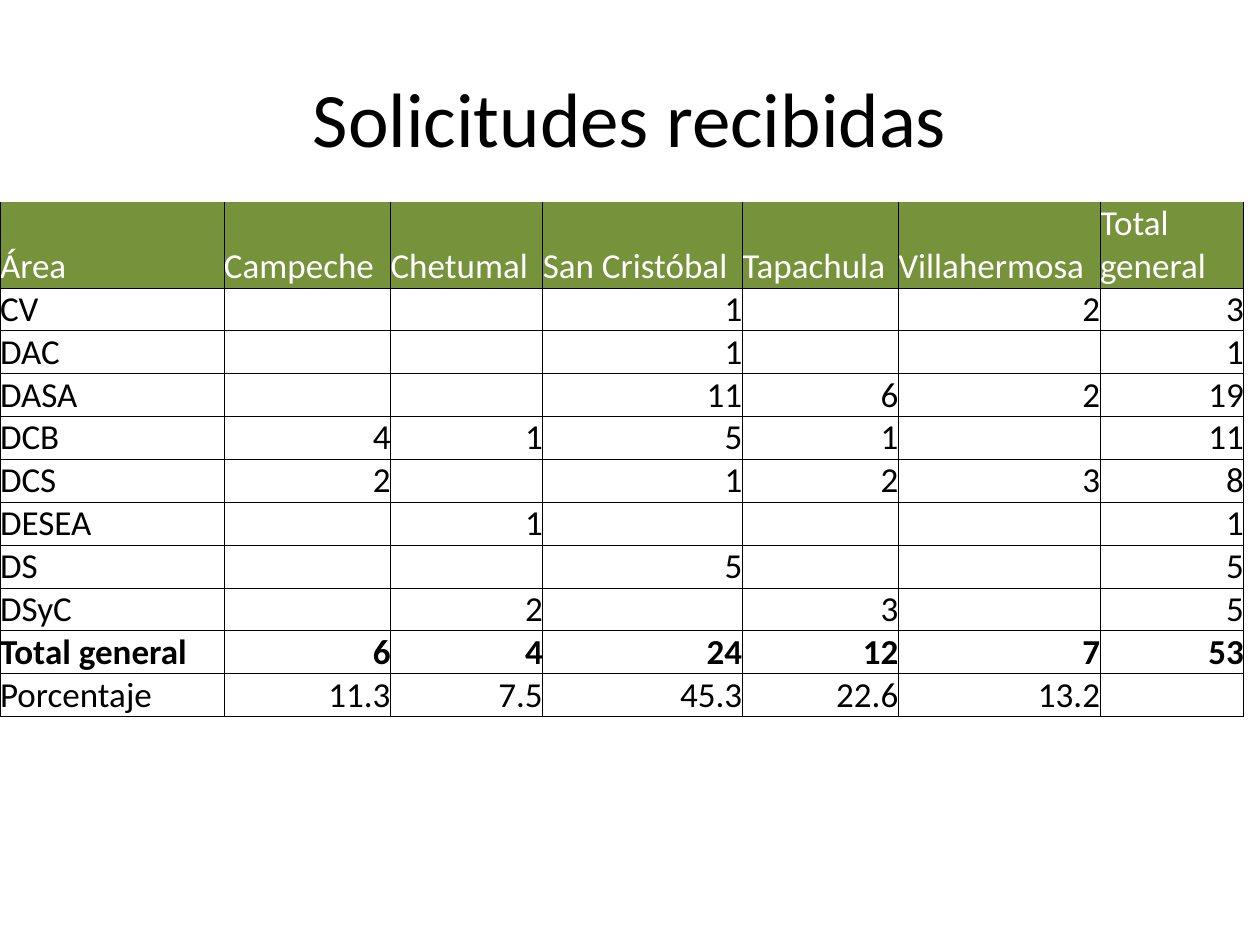
from dataclasses import dataclass

from lxml import etree
from pptx import Presentation
from pptx import util as u
from pptx.dml.color import RGBColor
from pptx.enum import text
from pptx.oxml import ns

COLORS = {"text": "000000", "line": "000000", "header": "76933C", "header_text": "FFFFFF"}
FONT = "Calibri"
COLUMN_WIDTHS = [128, 95.2, 87, 114, 89.2, 115.3, 82.2]
HEADER_HEIGHT = 49
ROW_HEIGHT = 24.5


@dataclass
class Row:
    values: list[str]
    header: bool = False
    bold: bool = False


ROWS = [
    Row(["Área", "Campeche", "Chetumal", "San Cristóbal", "Tapachula",
         "Villahermosa", "Total general"], header=True),
    Row(["CV", "", "", "1", "", "2", "3"]),
    Row(["DAC", "", "", "1", "", "", "1"]),
    Row(["DASA", "", "", "11", "6", "2", "19"]),
    Row(["DCB", "4", "1", "5", "1", "", "11"]),
    Row(["DCS", "2", "", "1", "2", "3", "8"]),
    Row(["DESEA", "", "1", "", "", "", "1"]),
    Row(["DS", "", "", "5", "", "", "5"]),
    Row(["DSyC", "", "2", "", "3", "", "5"]),
    Row(["Total general", "6", "4", "24", "12", "7", "53"], bold=True),
    Row(["Porcentaje", "11.3", "7.5", "45.3", "22.6", "13.2", ""]),
]


def add_run(paragraph, words: str, size: float, color: str, bold: bool = False) -> None:
    run = paragraph.add_run()
    run.text = words
    run.font.name = FONT
    run.font.size = u.Pt(size)
    run.font.bold = bold
    run.font.color.rgb = RGBColor.from_string(COLORS[color])


def add_borders(cell, top: str) -> None:
    properties = cell._tc.get_or_add_tcPr()
    for side in "LRTB":
        line = etree.SubElement(properties, ns.qn(f"a:ln{side}"), w=str(u.Pt(0.5)))
        fill = etree.SubElement(line, ns.qn("a:solidFill"))
        color = COLORS[top if side == "T" else "line"]
        etree.SubElement(fill, ns.qn("a:srgbClr"), val=color)


def fill_cell(cell, words: str, row: Row, right: bool) -> None:
    cell.margin_left = cell.margin_right = cell.margin_top = cell.margin_bottom = u.Pt(0)
    cell.vertical_anchor = text.MSO_ANCHOR.BOTTOM
    add_borders(cell, "header" if row.header else "line")
    if row.header:
        cell.fill.solid()
        cell.fill.fore_color.rgb = RGBColor.from_string(COLORS["header"])
    else:
        cell.fill.background()
    paragraph = cell.text_frame.paragraphs[0]
    paragraph.alignment = text.PP_ALIGN.RIGHT if right else text.PP_ALIGN.LEFT
    if words:
        add_run(paragraph, words, 20, "header_text" if row.header else "text", row.bold)


def add_title(slide, words: str) -> None:
    shape = slide.shapes.add_textbox(u.Pt(36), u.Pt(21.6), u.Pt(648), u.Pt(90))
    frame = shape.text_frame
    frame.word_wrap = True
    frame.vertical_anchor = text.MSO_ANCHOR.MIDDLE
    paragraph = frame.paragraphs[0]
    paragraph.alignment = text.PP_ALIGN.CENTER
    add_run(paragraph, words, 44, "text")


def add_requests_table(slide) -> None:
    height = HEADER_HEIGHT + ROW_HEIGHT * (len(ROWS) - 1)
    shape = slide.shapes.add_table(len(ROWS), len(COLUMN_WIDTHS), u.Pt(0), u.Pt(115.6),
                                   u.Pt(sum(COLUMN_WIDTHS)), u.Pt(height))
    table = shape.table
    table.first_row = table.horz_banding = False
    for column, width in zip(table.columns, COLUMN_WIDTHS):
        column.width = u.Pt(width)
    for row_index, row in enumerate(ROWS):
        table.rows[row_index].height = u.Pt(HEADER_HEIGHT if row.header else ROW_HEIGHT)
        for column_index, words in enumerate(row.values):
            right = column_index > 0 and not row.header
            fill_cell(table.cell(row_index, column_index), words, row, right)


def main() -> None:
    presentation = Presentation()
    presentation.slide_width = u.Pt(720)
    presentation.slide_height = u.Pt(540)
    slide = presentation.slides.add_slide(presentation.slide_layouts[6])

    # Title
    add_title(slide, "Solicitudes recibidas")

    # Requests by area and campus
    add_requests_table(slide)

    presentation.save("out.pptx")


if __name__ == "__main__":
    main()
